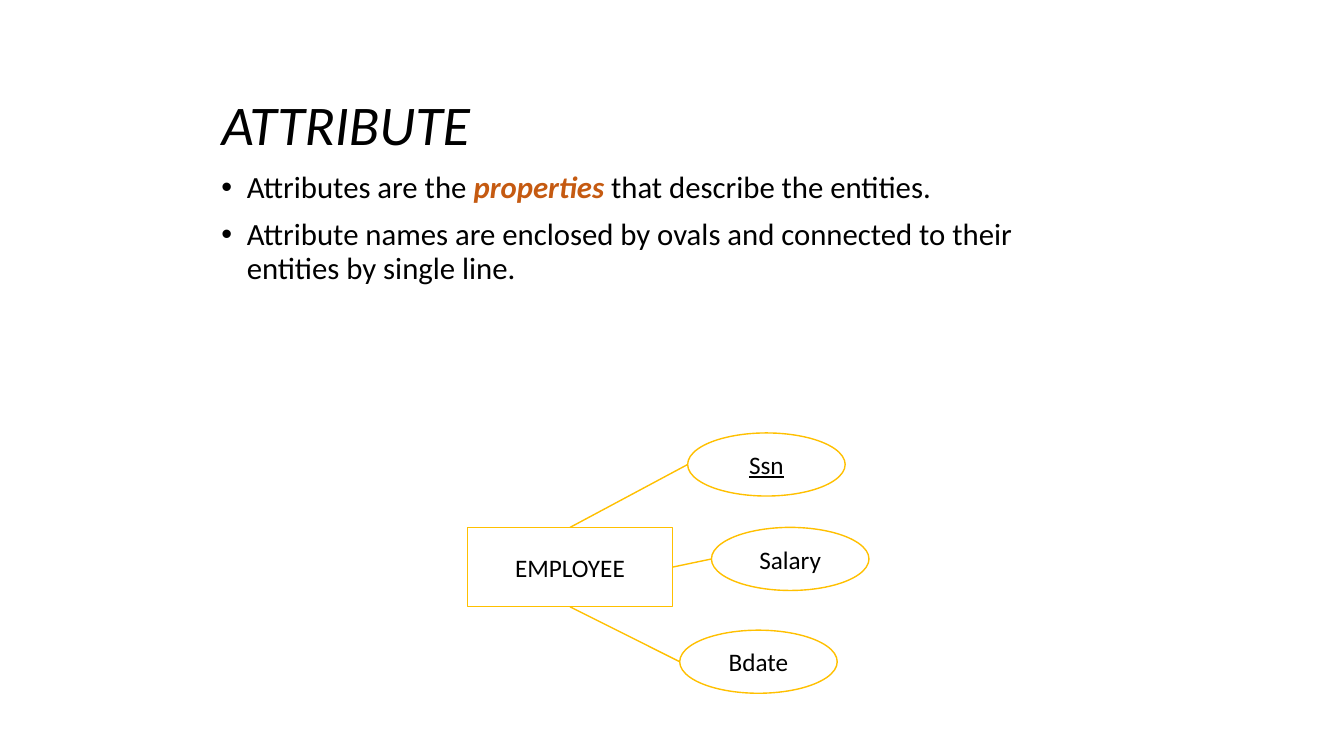
from lxml.etree import SubElement as Sub
from pptx import Presentation
from pptx.dml.color import RGBColor as Rgb
from pptx.enum.shapes import MSO_CONNECTOR as Link, MSO_SHAPE as Kind
from pptx.enum.text import MSO_ANCHOR as Anchor, MSO_AUTO_SIZE as Fit, PP_ALIGN as Align
from pptx.oxml.ns import qn
from pptx.util import Cm, Pt

# Content: text runs are (words, is key term)
TITLE = "ATTRIBUTE"
POINTS = [
    [("Attributes are the ", False), ("properties", True),
     (" that describe the entities.", False)],
    [("Attribute names are enclosed by ovals and connected to their "
      "entities by single line.", False)],
]
ENTITY = "EMPLOYEE"
# Ovals: name, left, top (cm), underlined, side of the entity joined
OVALS = [
    ("Ssn", 17.33, 10.91, True, "top"),
    ("Salary", 17.93, 13.29, False, "right"),
    ("Bdate", 17.13, 15.88, False, "low"),
]


class Theme:
    font = "Calibri"
    ink = Rgb(0, 0, 0)
    paper = Rgb(255, 255, 255)
    gold = Rgb(0xFF, 0xC0, 0x00)
    rust = Rgb(0xC5, 0x5A, 0x11)
    head, body, label, line = Pt(40), Pt(22), Pt(18), Pt(1)


# Layout in cm
LEFT, WIDE = 5.33, 20.83
HEAD = (LEFT, 2.31, WIDE, 1.9)
BODY = (LEFT, 4.21, WIDE, 6.07)
BOX = (11.78, 13.29, 5.17, 2)
OVAL = (3.97, 1.59)
HANG = Cm(0.64)


def style(font, color=Theme.ink, **more):
    font.color.rgb = color
    for key, val in {"name": Theme.font, **more}.items():
        setattr(font, key, val)


def place(shape, area):
    for key, val in zip(("left", "top", "width", "height"), area):
        setattr(shape, key, Cm(val))


def node(kind, area, name, under=False):
    shape = slide.shapes.add_shape(kind, *map(Cm, area))
    shape.shadow.inherit = False
    shape.fill.solid()
    shape.fill.fore_color.rgb = Theme.paper
    shape.line.color.rgb = Theme.gold
    shape.line.width = Theme.line
    frame = shape.text_frame
    frame.vertical_anchor = Anchor.MIDDLE
    para = frame.paragraphs[0]
    para.alignment = Align.CENTER
    run = para.add_run()
    run.text = name
    style(run.font, size=Theme.label, underline=under)
    return shape


def join(box, site, oval):
    line = slide.shapes.add_connector(Link.STRAIGHT, 0, 0, 0, 0)
    line.begin_connect(box, site)
    line.end_connect(oval, 2)
    # Site 2 of an oval is its left tip
    line.end_x, line.end_y = oval.left, oval.top + oval.height // 2
    line.line.color.rgb = Theme.gold
    line.line.width = Theme.line
    Sub(line._element.spPr, qn("a:effectLst"))


deck = Presentation()
deck.slide_width, deck.slide_height = Cm(33.87), Cm(19.05)
slide = deck.slides.add_slide(deck.slide_layouts[5])

# Title
title = slide.shapes.title
place(title, HEAD)
frame = title.text_frame
frame.text = TITLE
frame.vertical_anchor = Anchor.TOP
frame.auto_size = Fit.NONE
para = frame.paragraphs[0]
para.alignment = Align.LEFT
para.line_spacing = 0.9
style(para.runs[0].font, size=Theme.head, italic=True)

# Bullet points
frame = slide.shapes.add_textbox(*map(Cm, BODY)).text_frame
frame.word_wrap = True
for i, point in enumerate(POINTS):
    para = frame.add_paragraph() if i else frame.paragraphs[0]
    para.line_spacing = 0.9
    para.space_before = Pt(10 if i else 0)
    props = para._p.get_or_add_pPr()
    props.set("marL", str(HANG))
    props.set("indent", str(-HANG))
    Sub(props, qn("a:buFont"), typeface="Arial")
    Sub(props, qn("a:buChar"), char="•")
    for words, key in point:
        run = para.add_run()
        run.text = words
        style(run.font, Theme.rust if key else Theme.ink,
              size=Theme.body, bold=key, italic=key)

# Entity with its attributes
box = node(Kind.RECTANGLE, BOX, ENTITY)
sites = {"top": 0, "low": 2, "right": 3}
for name, left, top, under, side in OVALS:
    oval = node(Kind.OVAL, (left, top, *OVAL), name, under)
    join(box, sites[side], oval)

deck.save("out.pptx")
